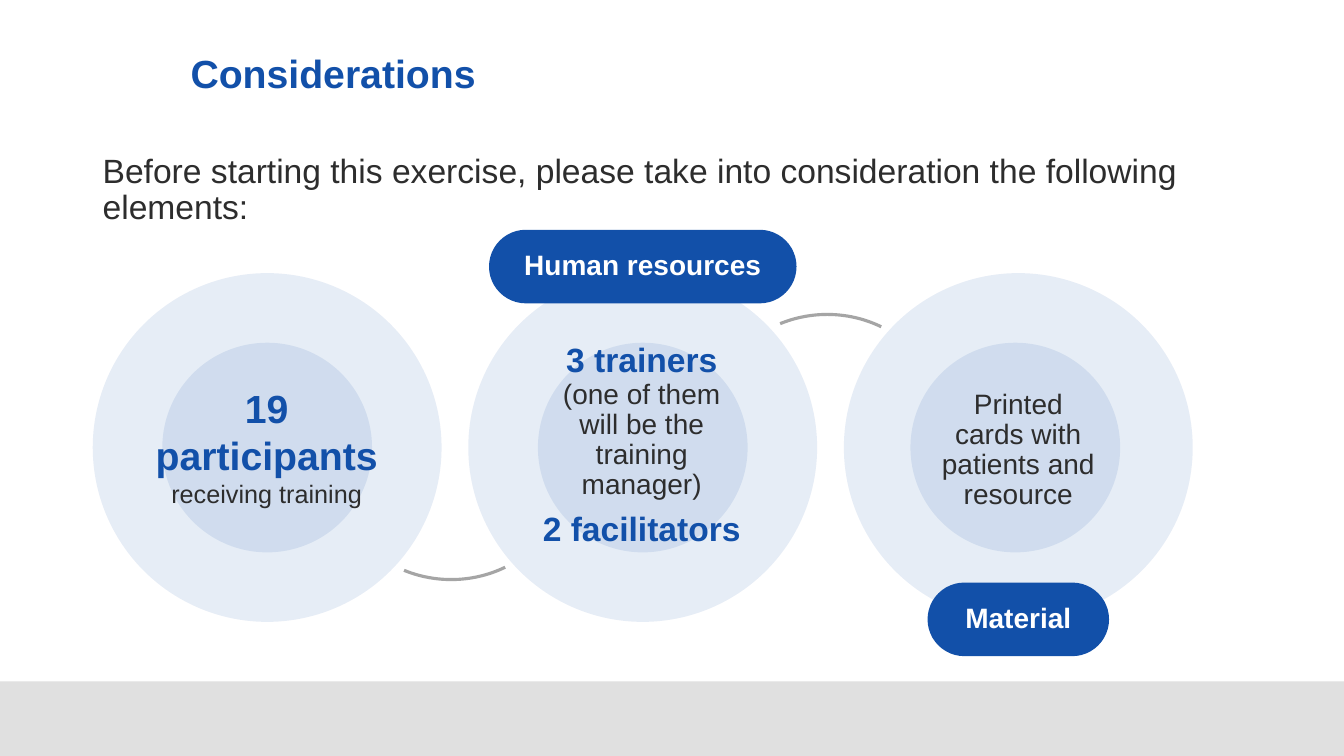
import pptx
import pptx.util
import pptx.dml.color
import pptx.enum.shapes
import pptx.enum.text
import pptx.oxml
import pptx.oxml.ns

THEME = {
    "blue": "1250A9", "ink": "2D2D2D", "white": "FFFFFF", "bar": "E0E0E0", "arc": "A5A5A5",
    "font": "Arial", "title": 28, "lead": 24, "label": 20, "small": 18, "arc_line": 2.25,
}
SHAPES = pptx.enum.shapes.MSO_SHAPE
ALIGN = pptx.enum.text.PP_ALIGN
ANCHOR = pptx.enum.text.MSO_ANCHOR
WIDTH, HEIGHT = 13.33, 7.5

deck = pptx.Presentation()
deck.slide_width = pptx.util.Inches(WIDTH)
deck.slide_height = pptx.util.Inches(HEIGHT)
page = deck.slides.add_slide(deck.slide_layouts[5])


def add_form(kind, left, top, width, height, fill=None, alpha=None):
    """Add a preset shape without shadow or outline, optionally see-through."""
    form = page.shapes.add_shape(kind, *map(pptx.util.Inches, (left, top, width, height)))
    form.shadow.inherit = False
    form.line.fill.background()
    if fill is None:
        form.fill.background()
        return form
    form.fill.solid()
    form.fill.fore_color.rgb = pptx.dml.color.RGBColor.from_string(THEME[fill])
    if alpha is not None:
        color = form.fill._xPr.find(".//" + pptx.oxml.ns.qn("a:srgbClr"))
        color.append(pptx.oxml.parse_xml(
            f'<a:alpha {pptx.oxml.ns.nsdecls("a")} val="{alpha * 1000}"/>'))
    return form


def write(box, lines, align=ALIGN.CENTER, anchor=ANCHOR.TOP, spacing=0.9):
    """Fill a box with (text, size, colour, bold, space before, space after) lines."""
    frame = box.text_frame
    frame.word_wrap = True
    frame.auto_size = pptx.enum.text.MSO_AUTO_SIZE.NONE
    frame.vertical_anchor = anchor
    for index, (text, size, color, bold, before, after) in enumerate(lines):
        para = frame.add_paragraph() if index else frame.paragraphs[0]
        layout = {"alignment": align, "line_spacing": spacing,
                  "space_before": pptx.util.Pt(before), "space_after": pptx.util.Pt(after)}
        for name, value in layout.items():
            setattr(para, name, value)
        span = para.add_run()
        span.text = text
        look = {"name": THEME["font"], "size": pptx.util.Pt(THEME[size]), "bold": bold}
        for name, value in look.items():
            setattr(span.font, name, value)
        span.font.color.rgb = pptx.dml.color.RGBColor.from_string(THEME[color])


# Footer bar
BAR_TOP = 6.76
add_form(SHAPES.RECTANGLE, 0, BAR_TOP, WIDTH, HEIGHT - BAR_TOP, "bar")

# Title
title = page.shapes.title
place = {"left": 1.79, "top": 0.03, "width": 10.32, "height": 1.45}
for name, value in place.items():
    setattr(title, name, pptx.util.Inches(value))
write(title, [("Considerations", "title", "blue", True, 0, 6)], ALIGN.LEFT, ANCHOR.MIDDLE)

# Linking arcs: one below the first gap, one above the second
for left, top, flipped in ((3.35, 3.72, False), (7.08, 3.12, True)):
    arc = add_form(SHAPES.ARC, left, top, 2.25, 2.03)
    arc.adjustments[0], arc.adjustments[1] = 35.429, 70.105
    arc.line.color.rgb = pptx.dml.color.RGBColor.from_string(THEME["arc"])
    arc.line.width = pptx.util.Pt(THEME["arc_line"])
    if flipped:
        arc._element.spPr.find(pptx.oxml.ns.qn("a:xfrm")).set("flipV", "1")

# Three columns of nested circles
FIRST, PITCH, TOP, OUTER, INNER = 0.92, 3.725, 2.71, 3.46, 2.08
INSET = (OUTER - INNER) / 2
for column, nudge in enumerate((0, 0, -0.03)):
    left = FIRST + column * PITCH
    add_form(SHAPES.OVAL, left, TOP, OUTER, OUTER, "blue", 10)
    add_form(SHAPES.OVAL, left + INSET + nudge, TOP + INSET, INNER, INNER, "blue", 10)

# Pill labels
for text, left, top, width in (("Human resources", 4.85, 2.28, 3.05),
                               ("Material", 9.2, 5.78, 1.8)):
    pill = add_form(SHAPES.ROUNDED_RECTANGLE, left, top, width, 0.73, "blue")
    pill.adjustments[0] = 0.5
    write(pill, [(text, "label", "white", True, 0, 6)], anchor=ANCHOR.MIDDLE)

# Lead sentence and circle texts
texts = [
    ((FIRST, 1.48, 11.94, 0.9), ALIGN.LEFT, 0.9, [
        ("Before starting this exercise, please take into consideration the following elements:",
         "lead", "ink", False, 0, 6)]),
    ((1.38, 3.76, 2.53, 1.35), ALIGN.CENTER, 1.0, [
        ("19 participants", "title", "blue", True, 0, 0),
        ("receiving training", "small", "ink", False, 0, 0)]),
    ((5.26, 3.36, 2.21, 2.15), ALIGN.CENTER, 0.9, [
        ("3 trainers", "lead", "blue", True, 0, 0),
        ("(one of them will be the training manager)", "label", "ink", False, 0, 0),
        ("2 facilitators", "lead", "blue", True, 8, 6)]),
    ((9.2, 3.82, 1.8, 1.31), ALIGN.CENTER, 0.9, [
        ("Printed cards with patients and resource", "label", "ink", False, 0, 0)]),
]
for bounds, align, spacing, lines in texts:
    box = page.shapes.add_textbox(*map(pptx.util.Inches, bounds))
    write(box, lines, align, spacing=spacing)

deck.save("out.pptx")
